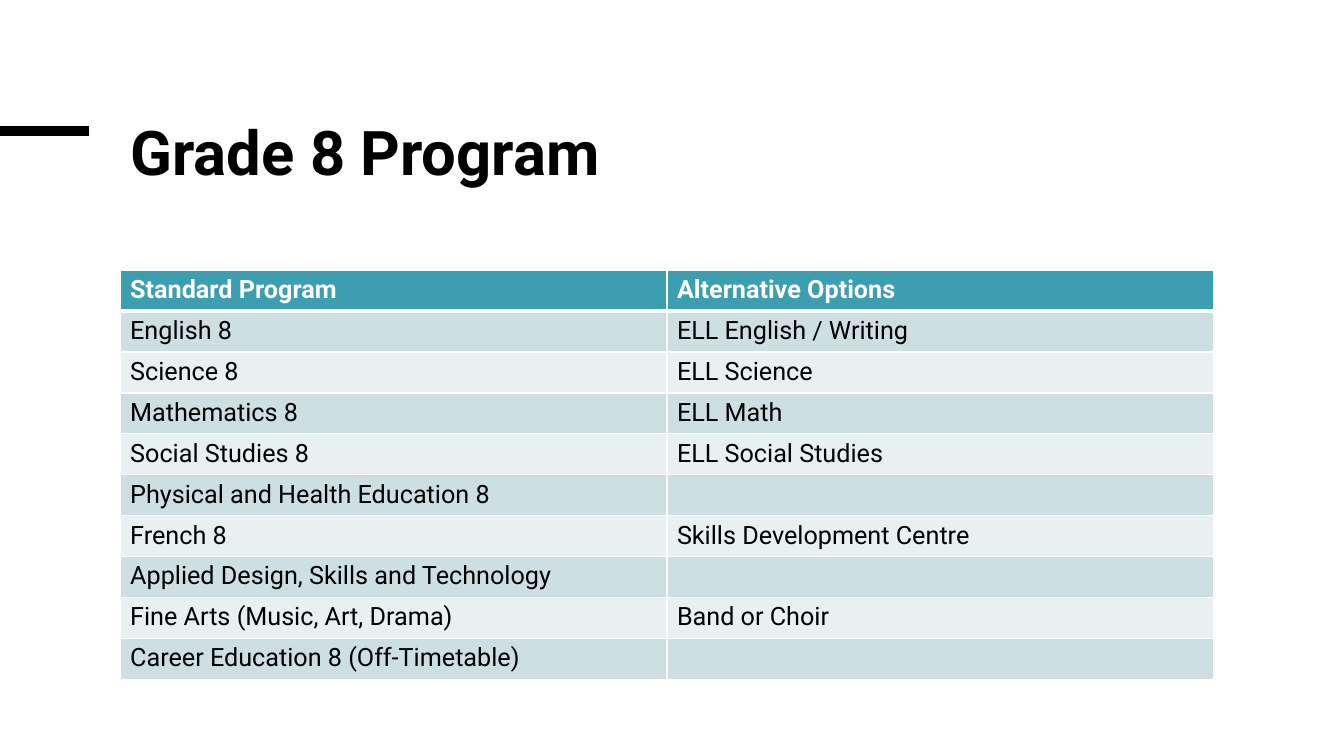
import pptx
import pptx.dml.color
import pptx.enum.shapes
import pptx.enum.text
import pptx.oxml
import pptx.oxml.ns
import pptx.util

Pt = pptx.util.Pt
RGB = pptx.dml.color.RGBColor.from_string
FONT = "Roboto"
COLORS = {"ink": "000000", "white": "FFFFFF", "head": "3B9EB1",
          "odd": "CEDFE4", "even": "E8F0F2"}
LEFT, WIDTH = 85.8, 781.2

rows = [
    ("Standard Program", "Alternative Options"),
    ("English 8", "ELL English / Writing"),
    ("Science 8", "ELL Science"),
    ("Mathematics 8", "ELL Math"),
    ("Social Studies 8", "ELL Social Studies"),
    ("Physical and Health Education 8", ""),
    ("French 8", "Skills Development Centre"),
    ("Applied Design, Skills and Technology", ""),
    ("Fine Arts (Music, Art, Drama)", "Band or Choir"),
    ("Career Education 8 (Off-Timetable)", ""),
]


def style(font, size, bold, color):
    for name, value in {"name": FONT, "size": Pt(size), "bold": bold}.items():
        setattr(font, name, value)
    font.color.rgb = RGB(COLORS[color])


def edge(cell, side, width):
    cell._tc.get_or_add_tcPr().append(pptx.oxml.parse_xml(
        f'<a:{side} {pptx.oxml.ns.nsdecls("a")} w="{Pt(width)}"><a:solidFill>'
        f'<a:srgbClr val="{COLORS["white"]}"/></a:solidFill></a:{side}>'))


deck = pptx.Presentation()
deck.slide_width, deck.slide_height = Pt(960), Pt(540)
slide = deck.slides.add_slide(deck.slide_layouts[5])
slide.background.fill.solid()
slide.background.fill.fore_color.rgb = RGB(COLORS["white"])

# Accent bar
bar = slide.shapes.add_connector(
    pptx.enum.shapes.MSO_CONNECTOR.STRAIGHT, Pt(0), Pt(93.6), Pt(63.6), Pt(93.6))
bar.line.width = Pt(6.75)
bar.line.color.rgb = RGB(COLORS["ink"])
bar._element.spPr.append(pptx.oxml.parse_xml(
    f'<a:effectLst {pptx.oxml.ns.nsdecls("a")}/>'))

# Title
title = slide.shapes.title
box = {"left": LEFT, "top": 85.8, "width": WIDTH, "height": 102}
for name, value in box.items():
    setattr(title, name, Pt(value))
frame = title.text_frame
frame.text = "Grade 8 Program"
frame.word_wrap = True
frame.auto_size = pptx.enum.text.MSO_AUTO_SIZE.NONE
frame.vertical_anchor = pptx.enum.text.MSO_ANCHOR.TOP
para = frame.paragraphs[0]
para.alignment = pptx.enum.text.PP_ALIGN.LEFT
para.line_spacing = 0.85
style(para.runs[0].font, 44, True, "ink")

# Program table
table = slide.shapes.add_table(
    len(rows), 2, Pt(LEFT), Pt(193), Pt(WIDTH), Pt(292.5)).table
for r, row in enumerate(rows):
    head = r == 0
    shade = "head" if head else "odd" if r % 2 else "even"
    for c, text in enumerate(row):
        cell = table.cell(r, c)
        for side in ("lnL", "lnR", "lnT", "lnB"):
            thick = (head and side == "lnB") or (r == 1 and side == "lnT")
            edge(cell, side, 3 if thick else 1)
        cell.fill.solid()
        cell.fill.fore_color.rgb = RGB(COLORS[shade])
        cell.text = text
        style(cell.text_frame.paragraphs[0].font, 18, head, "white" if head else "ink")
        for run in cell.text_frame.paragraphs[0].runs:
            style(run.font, 18, head, "white" if head else "ink")

deck.save("out.pptx")
